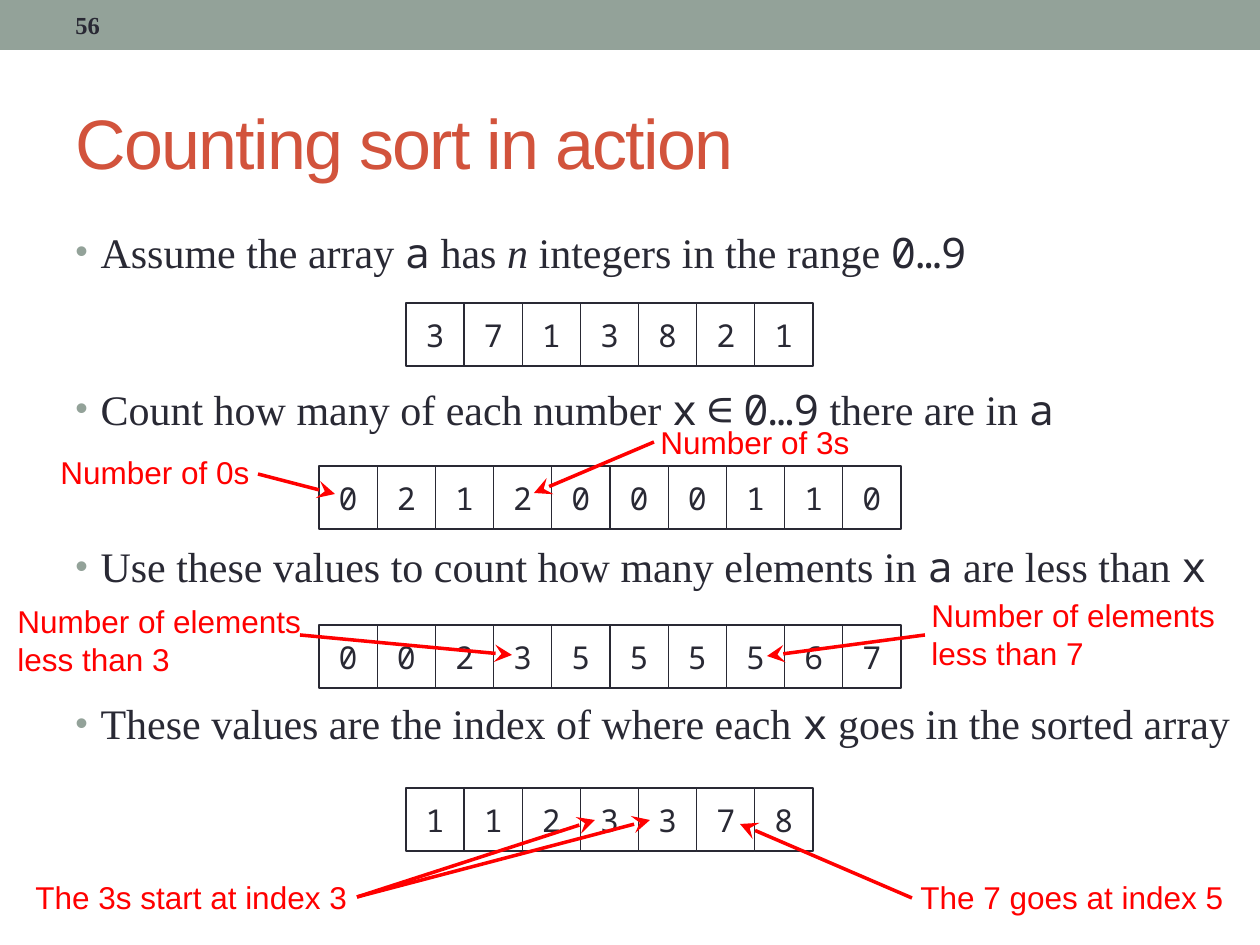
import pptx
import pptx.util
import pptx.dml.color
import pptx.enum.shapes
import pptx.enum.text
import pptx.oxml.ns
from lxml import etree

SCALE = 914400 / 126
HUES = {"band": "93A299", "title": "D2533C", "ink": "292934", "note": "FF0000"}
SANS, SERIF, MONO = "Arial", "Times New Roman", "Noto Sans Mono"
MIDDLE = pptx.enum.text.MSO_ANCHOR.MIDDLE
RECT = pptx.enum.shapes.MSO_SHAPE.RECTANGLE


def px(*sizes):
    return [pptx.util.Emu(round(size * SCALE)) for size in sizes]


def rgb(name):
    return pptx.dml.color.RGBColor.from_string(HUES[name])


def child(parent, tag, **attrs):
    node = etree.SubElement(parent, pptx.oxml.ns.qn(tag))
    for key, value in attrs.items():
        node.set(key, str(value))
    return node


class Deck:
    def __init__(self, wide, high):
        self.prs = pptx.Presentation()
        self.prs.slide_width, self.prs.slide_height = px(wide, high)
        self.slide = self.prs.slides.add_slide(self.prs.slide_layouts[6])
        self.shapes = self.slide.shapes

    def style(self, run, size, face, hue):
        font = run.font
        font.size, font.name = pptx.util.Pt(size), face
        font.color.rgb = rgb(hue)
        return font

    def band(self, *box):
        bar = self.shapes.add_shape(RECT, *px(*box))
        bar.shadow.inherit = False
        bar.fill.solid()
        bar.fill.fore_color.rgb = rgb("band")
        bar.line.fill.background()

    def text(self, box, words, size, face, hue, wrap=True):
        frame = self.shapes.add_textbox(*px(*box)).text_frame
        frame.text = words
        frame.word_wrap = wrap
        return frame, self.style(frame.paragraphs[0].runs[0], size, face, hue)

    def heading(self, box, words):
        frame, font = self.text(box, words, 40, SANS, "title")
        frame.vertical_anchor = MIDDLE
        frame.paragraphs[0].runs[0]._r.get_or_add_rPr().set("spc", "-100")

    def number(self, box, words):
        frame, font = self.text(box, words, 14, SERIF, "ink")
        frame.vertical_anchor = MIDDLE
        font.bold = True

    def bullets(self, box, items, gap):
        """Each item is a list of (words, face, italic) parts."""
        frame = self.shapes.add_textbox(*px(*box)).text_frame
        frame.word_wrap = True
        for i, parts in enumerate(items):
            para = frame.add_paragraph() if i else frame.paragraphs[0]
            para.space_before = pptx.util.Pt(gap if i else 0)
            props = para._p.get_or_add_pPr()
            props.set("marL", "182880")
            props.set("indent", "-182880")
            child(child(props, "a:buClr"), "a:srgbClr", val=HUES["band"])
            child(props, "a:buSzPct", val=85000)
            child(props, "a:buFont", typeface=SANS)
            child(props, "a:buChar", char="•")
            for words, face, slant in parts:
                run = para.add_run()
                run.text = words
                self.style(run, 24, face, "ink").italic = slant

    def row(self, left, right, top, digits):
        """Draw an array as equal boxes between left and right."""
        group = self.shapes.add_group_shape()
        wide = (right - left) / len(digits)
        for i, digit in enumerate(digits):
            cell = group.shapes.add_shape(RECT, *px(left + i * wide, top, wide, 63))
            cell.shadow.inherit = False
            cell.fill.background()
            cell.line.color.rgb = rgb("ink")
            cell.line.width = pptx.util.Pt(0.75)
            frame = cell.text_frame
            frame.text = digit
            frame.word_wrap = False
            frame.vertical_anchor = MIDDLE
            para = frame.paragraphs[0]
            para.alignment = pptx.enum.text.PP_ALIGN.CENTER
            self.style(para.runs[0], 18, MONO, "ink")

    def note(self, box, words, wrap=False):
        frame, font = self.text(box, words, 18, SANS, "note", wrap)
        frame.auto_size = pptx.enum.text.MSO_AUTO_SIZE.SHAPE_TO_FIT_TEXT

    def arrow(self, *ends):
        kind = pptx.enum.shapes.MSO_CONNECTOR.STRAIGHT
        link = self.shapes.add_connector(kind, *px(*ends))
        link.line.color.rgb = rgb("note")
        link.line.width = pptx.util.Pt(2)
        child(link.line._get_or_add_ln(), "a:tailEnd", type="stealth", w="lg", len="lg")
        child(link._element.spPr, "a:effectLst")


def serif(words, slant=False):
    return words, SERIF, slant


def mono(words):
    return words, MONO, False


def main():
    deck = Deck(1260, 945)
    deck.band(0, 0, 1260, 50)
    deck.heading((63, 73, 1197, 136), "Counting sort in action")
    deck.bullets((63, 220, 1197, 702), [
        [serif("Assume the array "), mono("a"), serif(" has "), serif("n ", True),
         serif("integers in the range "), mono("0…9")],
        [serif("Count how many of each number "), mono("x"), serif(" "), mono("∈"),
         serif(" "), mono("0…9"), serif(" there are in "), mono("a")],
        [serif("Use these values to count how many elements in "), mono("a"),
         serif(" are less than "), mono("x")],
        [serif("These values are the index of where each "), mono("x"),
         serif(" goes in the sorted array")],
    ], 61)
    deck.number((63, 2, 399, 45), "56")

    short, long = (406, 813), (319, 901)
    for span, top, digits in [
        (short, 303, "3713821"),
        (long, 466, "0212000110"),
        (long, 625, "0023555567"),
        (short, 788, "1123378"),
    ]:
        deck.row(*span, top, digits)

    deck.note((48, 447, 217, 50), "Number of 0s")
    deck.note((648, 417, 217, 50), "Number of 3s")
    deck.note((919, 590, 320, 89), "Number of elements less than 7", True)
    deck.note((5, 596, 315, 89), "Number of elements less than 3", True)
    deck.note((23, 872, 340, 50), "The 3s start at index 3")
    deck.note((908, 872, 331, 50), "The 7 goes at index 5")

    for ends in [
        (258, 474, 335, 494),
        (654, 442, 534, 493),
        (925, 635, 767, 656),
        (300, 635, 512, 655),
        (912, 898, 740, 824),
        (357, 897, 650, 820),
        (357, 897, 595, 820),
    ]:
        deck.arrow(*ends)
    deck.prs.save("out.pptx")


if __name__ == "__main__":
    main()
